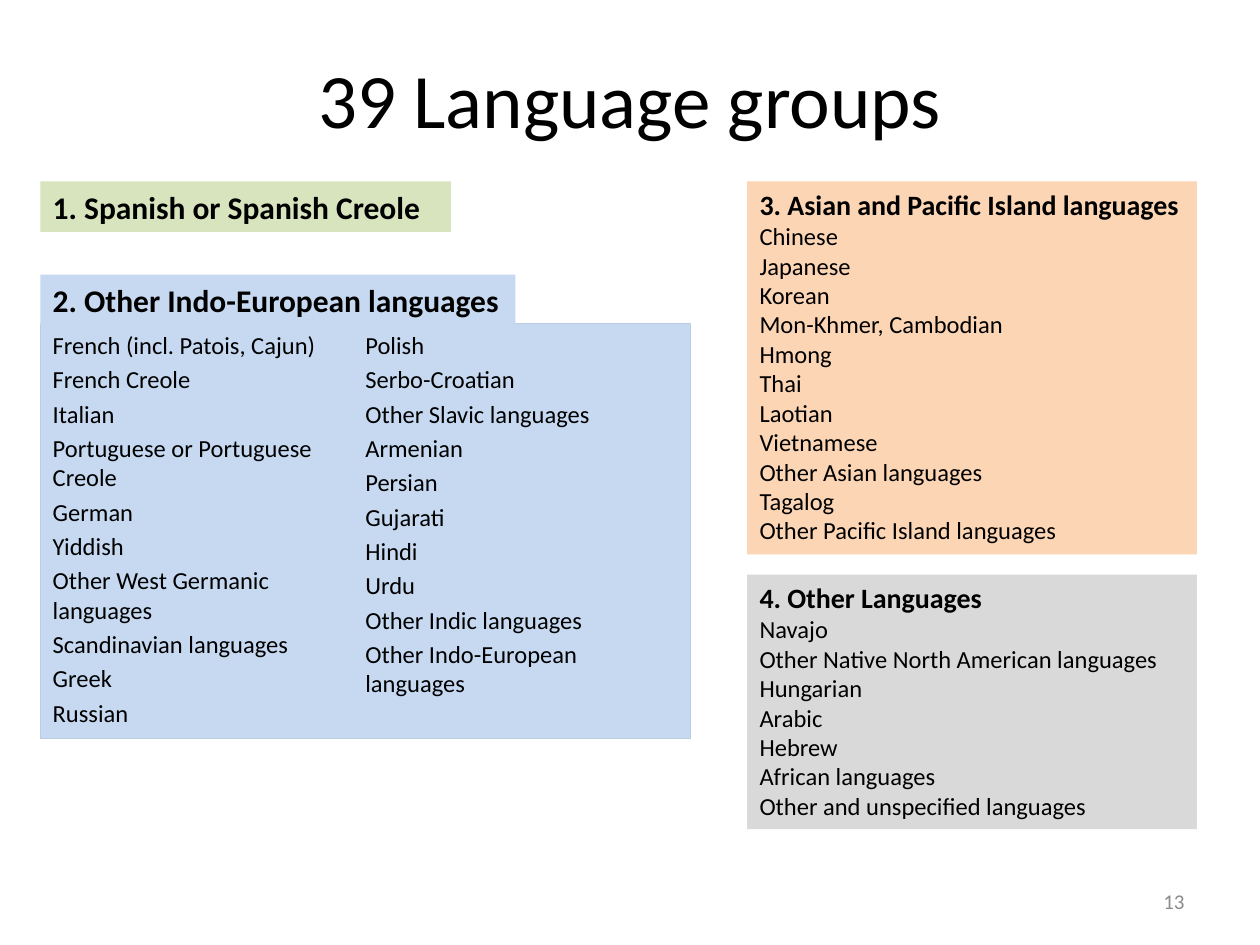
from pptx import Presentation, util as u
from pptx.dml.color import RGBColor
from pptx.enum import shapes, text

WIDTH, HEIGHT = 10, 7.5
LEFT, RIGHT = 0.32, 5.93
TOP = 1.44
SIDE_WIDTH = 3.57
HEADING_HEIGHT = 0.4
BLUE = "C6D9F1"

EUROPEAN = [
    "French (incl. Patois, Cajun)", "French Creole", "Italian",
    "Portuguese or Portuguese Creole", "German", "Yiddish",
    "Other West Germanic languages", "Scandinavian languages", "Greek",
    "Russian", "Polish", "Serbo-Croatian", "Other Slavic languages",
    "Armenian", "Persian", "Gujarati", "Hindi", "Urdu",
    "Other Indic languages", "Other Indo-European languages",
]
ASIAN = [
    "Chinese", "Japanese", "Korean", "Mon-Khmer, Cambodian", "Hmong", "Thai",
    "Laotian", "Vietnamese", "Other Asian languages", "Tagalog",
    "Other Pacific Island languages",
]
OTHER = [
    "Navajo", "Other Native North American languages", "Hungarian", "Arabic",
    "Hebrew", "African languages", "Other and unspecified languages",
]


def color(value):
    return RGBColor.from_string(value)


def inches(lengths):
    return [u.Inches(length) for length in lengths]


def write(frame, lines, size, tint="000000", bold=False,
          align=text.PP_ALIGN.LEFT, gap=0):
    """Add lines below any text already in the frame, gap points apart."""
    for line in lines:
        first = not frame.text
        para = frame.paragraphs[0] if first else frame.add_paragraph()
        para.text = line
        para.alignment = align
        para.space_before = u.Pt(0 if first else gap)
        para.font.name = "Calibri"
        para.font.size = u.Pt(size)
        para.font.bold = bold
        para.font.color.rgb = color(tint)


def add_label(page, area, words, size, align, tint="000000"):
    frame = page.shapes.add_textbox(*inches(area)).text_frame
    frame.word_wrap = True
    frame.vertical_anchor = text.MSO_ANCHOR.MIDDLE
    write(frame, [words], size, tint, align=align)


def add_panel(page, area, fill, line=None):
    """Add a filled rectangle and return its text frame."""
    box = page.shapes.add_shape(shapes.MSO_SHAPE.RECTANGLE, *inches(area))
    box.shadow.inherit = False
    box.fill.solid()
    box.fill.fore_color.rgb = color(fill)
    if line:
        box.line.color.rgb = color(line)
        box.line.width = u.Pt(0.75)
    else:
        box.line.fill.background()
    box.text_frame.word_wrap = True
    box.text_frame.vertical_anchor = text.MSO_ANCHOR.TOP
    return box.text_frame


def add_heading(page, top, width, words, fill):
    frame = add_panel(page, (LEFT, top, width, HEADING_HEIGHT), fill)
    write(frame, [words], 18, bold=True)
    return frame


def add_group(page, top, height, heading, languages, fill):
    frame = add_panel(page, (RIGHT, top, SIDE_WIDTH, height), fill)
    write(frame, [heading], 16, bold=True)
    write(frame, languages, 14)


def add_column_list(page, area, languages, fill, line):
    frame = add_panel(page, area, fill, line)
    frame._txBody.bodyPr.set("numCol", "2")
    write(frame, languages, 14, gap=2.8)


def main():
    deck = Presentation()
    deck.slide_width, deck.slide_height = inches((WIDTH, HEIGHT))
    page = deck.slides.add_slide(deck.slide_layouts[6])

    add_label(page, (0.5, 0.3, 9, 0.95), "39 Language groups", 44,
              text.PP_ALIGN.CENTER)
    add_column_list(page, (LEFT, 2.57, 5.16, 3.29), EUROPEAN, BLUE, "B9CDE5")
    add_label(page, (7.17, 6.95, 2.33, 0.4), "13", 12,
              text.PP_ALIGN.RIGHT, "8C8C8C")
    add_heading(page, TOP, 3.26, "1. Spanish or Spanish Creole", "D7E4BD")
    add_group(page, TOP, 2.96, "3. Asian and Pacific Island languages",
              ASIAN, "FCD5B5")
    add_group(page, 4.56, 2.02, "4. Other Languages", OTHER, "D9D9D9")
    european = add_heading(page, 2.18, 3.77,
                           "2. Other Indo-European languages", BLUE)
    european.word_wrap = False

    deck.save("out.pptx")


if __name__ == "__main__":
    main()
